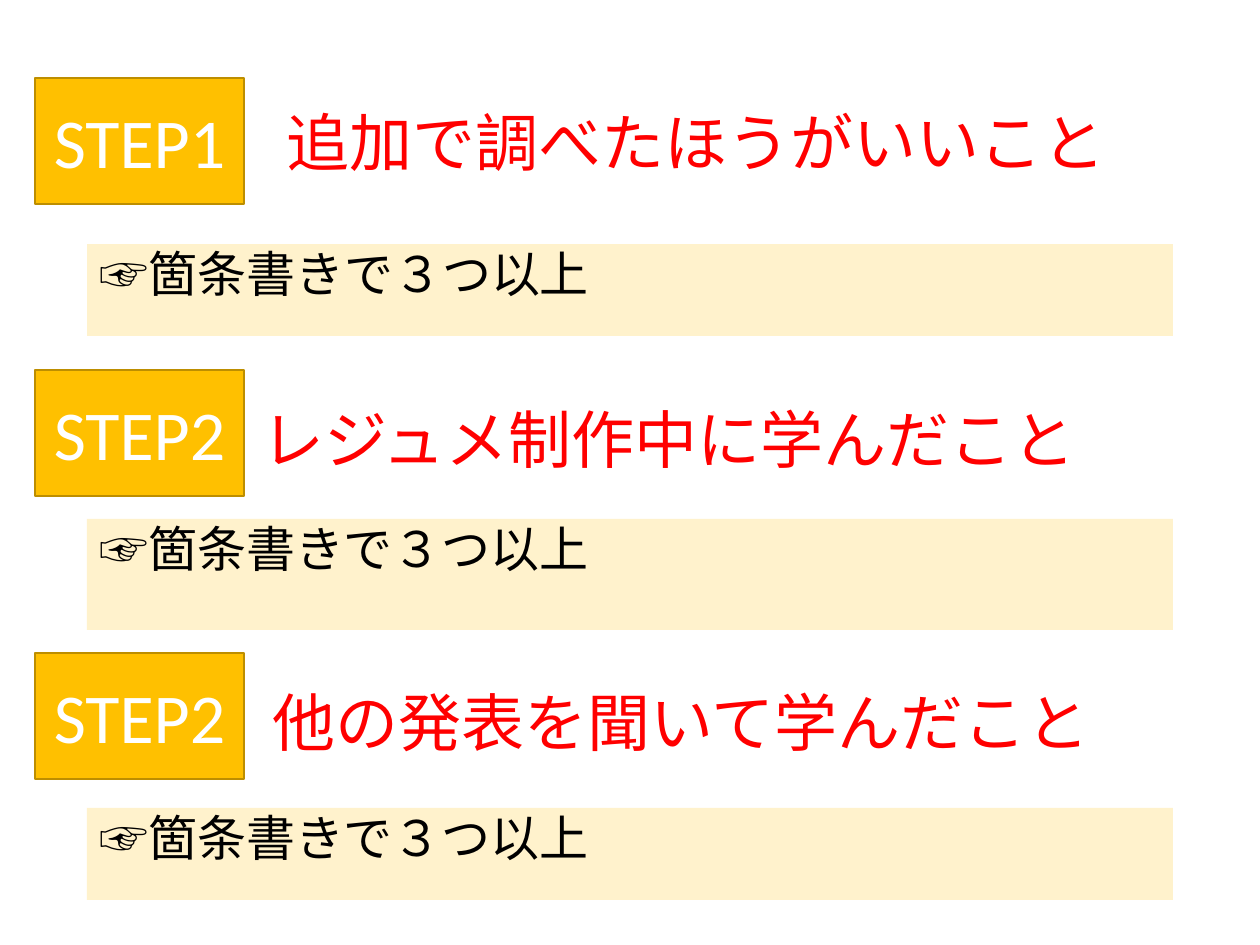
from pptx import Presentation
from pptx.dml.color import RGBColor
from pptx.enum.shapes import MSO_SHAPE
from pptx.enum.text import MSO_ANCHOR, MSO_AUTO_SIZE, PP_ALIGN
from pptx.util import Emu, Pt
from lxml.etree import SubElement

EMU_PER_PX = 914400 / 126
FONT = "Calibri"
COLORS = {
    "heading": "FF0000",
    "badge": "FFC000",
    "badge_line": "BD8E00",
    "badge_text": "FFFFFF",
    "panel": "FFF2CC",
    "panel_text": "000000",
}
HINT = "☞箇条書きで３つ以上"
STEPS = [
    ("STEP1", (35, 78), "追加で調べたほうがいいこと", (140, 50, 1034, 183), (244, 92)),
    ("STEP2", (35, 370), "レジュメ制作中に学んだこと", (113, 370, 1034, 137), (519, 111)),
    ("STEP2", (35, 653), "他の発表を聞いて学んだこと", (126, 653, 1034, 137), (808, 92)),
]


def px(length):
    return Emu(round(length * EMU_PER_PX))


def color(name):
    return RGBColor.from_string(COLORS[name])


def place(shape, left, top, width, height):
    shape.left, shape.top = px(left), px(top)
    shape.width, shape.height = px(width), px(height)


def add_rectangle(page):
    box = page.shapes.add_shape(MSO_SHAPE.RECTANGLE, 0, 0, 0, 0)
    box.shadow.inherit = False
    box.line.fill.background()
    return box


def set_fill(shape, name):
    shape.fill.solid()
    shape.fill.fore_color.rgb = color(name)


def format_text(shape, anchor, align, size, color_name):
    frame = shape.text_frame
    frame.word_wrap = True
    frame.auto_size = MSO_AUTO_SIZE.NONE
    frame.vertical_anchor = anchor
    para = frame.paragraphs[0]
    para.alignment = align
    para.font.name = FONT
    para.font.size = Pt(size)
    para.font.color.rgb = color(color_name)
    return para


def add_badge(page, label, left, top):
    badge = add_rectangle(page)
    place(badge, left, top, 209, 126)
    set_fill(badge, "badge")
    badge.line.color.rgb = color("badge_line")
    badge.line.width = Pt(1)
    badge.text_frame.text = label
    format_text(badge, MSO_ANCHOR.MIDDLE, PP_ALIGN.CENTER, 40, "badge_text")


def fill_heading(heading, text, bounds):
    place(heading, *bounds)
    para = format_text(heading, MSO_ANCHOR.MIDDLE, PP_ALIGN.CENTER, 36, "heading")
    para.line_spacing = 0.9
    lead = para.add_run()
    lead.text = "　"
    lead.font.size = Pt(44)
    span = para.add_run()
    span.text = text


def fill_panel(panel, top, height):
    place(panel, 87, top, 1086, height)
    set_fill(panel, "panel")
    panel.text_frame.text = HINT
    para = format_text(panel, MSO_ANCHOR.TOP, PP_ALIGN.LEFT, 28, "panel_text")
    para.line_spacing = 0.9
    para.space_before = Pt(10)
    properties = para._p.get_or_add_pPr()
    properties.set("marL", "0")
    properties.set("indent", "0")
    namespace = properties.nsmap["a"]
    bullet = SubElement(properties, f"{{{namespace}}}buNone")
    properties.find(f"{{{namespace}}}defRPr").addprevious(bullet)


def main():
    deck = Presentation()
    deck.slide_width, deck.slide_height = px(1260), px(945)
    page = deck.slides.add_slide(deck.slide_layouts[1])
    for index, (label, corner, text, bounds, band) in enumerate(STEPS):
        if index == 0:
            heading, panel = page.shapes.title, page.placeholders[1]
        else:
            heading = page.shapes.add_textbox(0, 0, 0, 0)
            panel = add_rectangle(page)
        fill_heading(heading, text, bounds)
        fill_panel(panel, *band)
        add_badge(page, label, *corner)
    deck.save("out.pptx")


if __name__ == "__main__":
    main()
